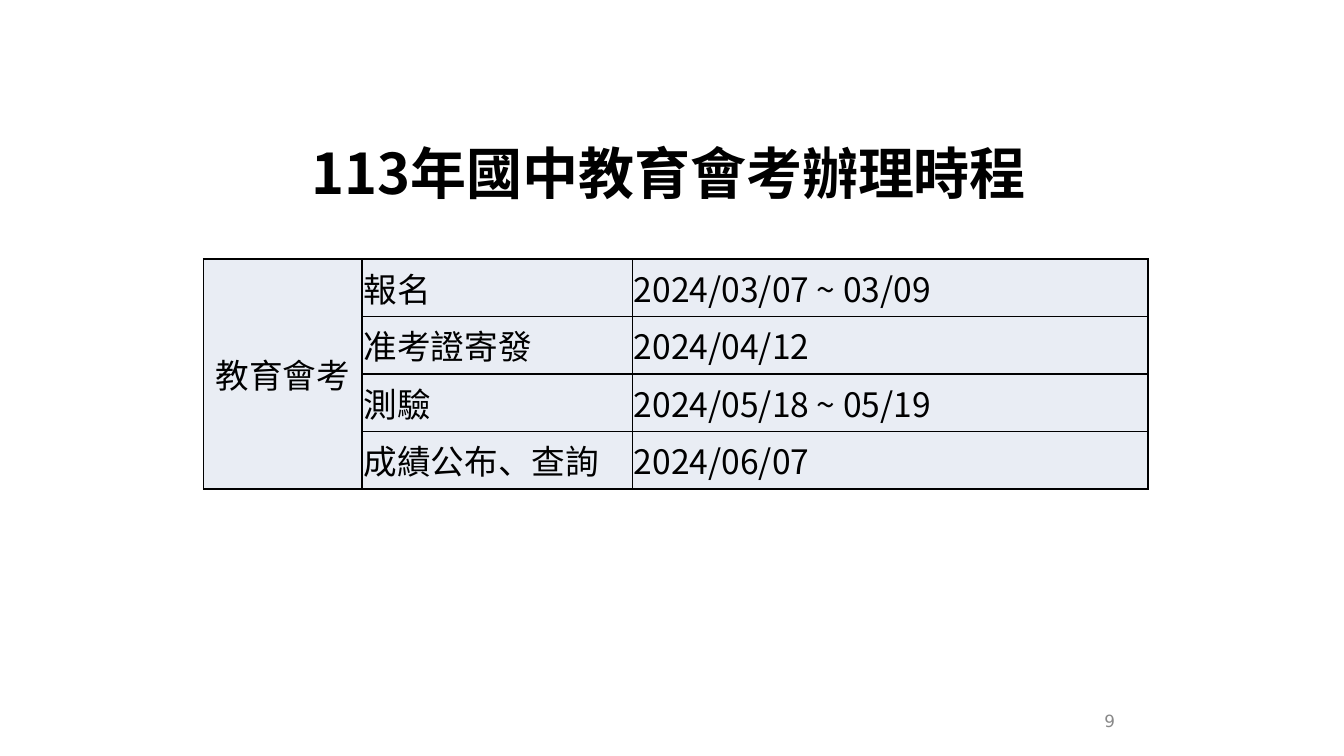
"""Build the exam timetable slide."""
from dataclasses import dataclass

from lxml import etree
from pptx import Presentation, util as u
from pptx.dml.color import RGBColor
from pptx.enum import text as t
from pptx.oxml import ns, parse_xml
from pptx.slide import Slide
from pptx.table import _Cell
from pptx.text.text import TextFrame

Pt = u.Pt
BLACK = RGBColor(0x00, 0x00, 0x00)
GREY = RGBColor(0x89, 0x89, 0x89)
PALE_BLUE = RGBColor(0xE9, 0xED, 0xF4)
CJK = "Noto Sans CJK SC"
COLUMN_WIDTHS = (113.2, 193, 368.4)
ROW_HEIGHT = 41.1
SHADOW = (
    f'<a:effectLst {ns.nsdecls("a")}><a:outerShdw blurRad="{Pt(3)}" dist="{Pt(3)}" '
    'dir="2700000" algn="tl"><a:srgbClr val="000000"><a:alpha val="43000"/>'
    '</a:srgbClr></a:outerShdw></a:effectLst>'
)


@dataclass(frozen=True)
class Style:
    size: float
    name: str = CJK
    color: RGBColor = BLACK
    bold: bool = False
    align: t.PP_ALIGN = t.PP_ALIGN.LEFT
    shadow: bool = False


@dataclass(frozen=True)
class Label:
    wording: str
    left: float
    top: float
    width: float
    height: float
    style: Style


@dataclass(frozen=True)
class Stage:
    name: str
    dates: str


BODY = Style(24)
CENTRED_BODY = Style(24, align=t.PP_ALIGN.CENTER)
PAGE_NUMBER = Label("9", 635.8, 500.4, 167.8, 28.8,
                    Style(12, "DejaVu Sans", GREY, align=t.PP_ALIGN.RIGHT))
TITLE = Label("113年國中教育會考辦理時程", 139.7, 82.8, 676, 80,
              Style(40, bold=True, align=t.PP_ALIGN.CENTER, shadow=True))
EXAM = "教育會考"
STAGES = (
    Stage("報名", "2024/03/07 ~ 03/09"),
    Stage("准考證寄發", "2024/04/12"),
    Stage("測驗", "2024/05/18 ~ 05/19"),
    Stage("成績公布、查詢", "2024/06/07"),
)


def write(frame: TextFrame, wording: str, style: Style) -> None:
    """Put styled wording in the first paragraph of a frame."""
    line = frame.paragraphs[0]
    line.alignment = style.align
    run = line.add_run()
    run.text = wording
    formats = {"size": Pt(style.size), "bold": style.bold, "name": style.name}
    for key, value in formats.items():
        setattr(run.font, key, value)
    run.font.color.rgb = style.color
    latin = run.font._element.find(ns.qn("a:latin"))
    east_asian = etree.Element(ns.qn("a:ea"), typeface=style.name)
    latin.addnext(east_asian)
    if style.shadow:
        latin.addprevious(parse_xml(SHADOW))


def add_label(slide: Slide, label: Label) -> None:
    """Draw one label centred vertically in its box."""
    edges = (label.left, label.top, label.width, label.height)
    frame = slide.shapes.add_textbox(*map(Pt, edges)).text_frame
    formats = {"word_wrap": True, "vertical_anchor": t.MSO_ANCHOR.MIDDLE}
    for key, value in formats.items():
        setattr(frame, key, value)
    write(frame, label.wording, label.style)


def format_cell(cell: _Cell) -> None:
    """Give a cell its margins, borders and fill."""
    formats = {
        "margin_left": Pt(1.2), "margin_right": Pt(1.2),
        "margin_top": 0, "margin_bottom": 0,
        "vertical_anchor": t.MSO_ANCHOR.MIDDLE,
    }
    for key, value in formats.items():
        setattr(cell, key, value)
    properties = cell._tc.get_or_add_tcPr()
    for side in "LRTB":
        properties.append(parse_xml(
            f'<a:ln{side} {ns.nsdecls("a")} w="{Pt(1)}"><a:solidFill>'
            f'<a:srgbClr val="{BLACK}"/></a:solidFill></a:ln{side}>'
        ))
    cell.fill.solid()
    cell.fill.fore_color.rgb = PALE_BLUE


def add_timetable(slide: Slide) -> None:
    """Draw the exam stages and their dates."""
    size = (sum(COLUMN_WIDTHS), ROW_HEIGHT * len(STAGES))
    table = slide.shapes.add_table(
        len(STAGES), len(COLUMN_WIDTHS), *map(Pt, (145.4, 185, *size))).table
    for key in ("first_row", "horz_banding"):
        setattr(table, key, False)
    for column, width in zip(table.columns, COLUMN_WIDTHS):
        column.width = Pt(width)
    for row in table.rows:
        row.height = Pt(ROW_HEIGHT)
    for cell in table.iter_cells():
        format_cell(cell)
    table.cell(0, 0).merge(table.cell(len(STAGES) - 1, 0))
    write(table.cell(0, 0).text_frame, EXAM, CENTRED_BODY)
    for index, stage in enumerate(STAGES):
        write(table.cell(index, 1).text_frame, stage.name, BODY)
        write(table.cell(index, 2).text_frame, stage.dates, BODY)


def main() -> None:
    """Compose and save the slide."""
    deck = Presentation()
    deck.slide_width, deck.slide_height = Pt(960), Pt(540)
    slide = deck.slides.add_slide(deck.slide_layouts[6])
    add_label(slide, PAGE_NUMBER)
    add_timetable(slide)
    add_label(slide, TITLE)
    deck.save("out.pptx")


if __name__ == "__main__":
    main()
